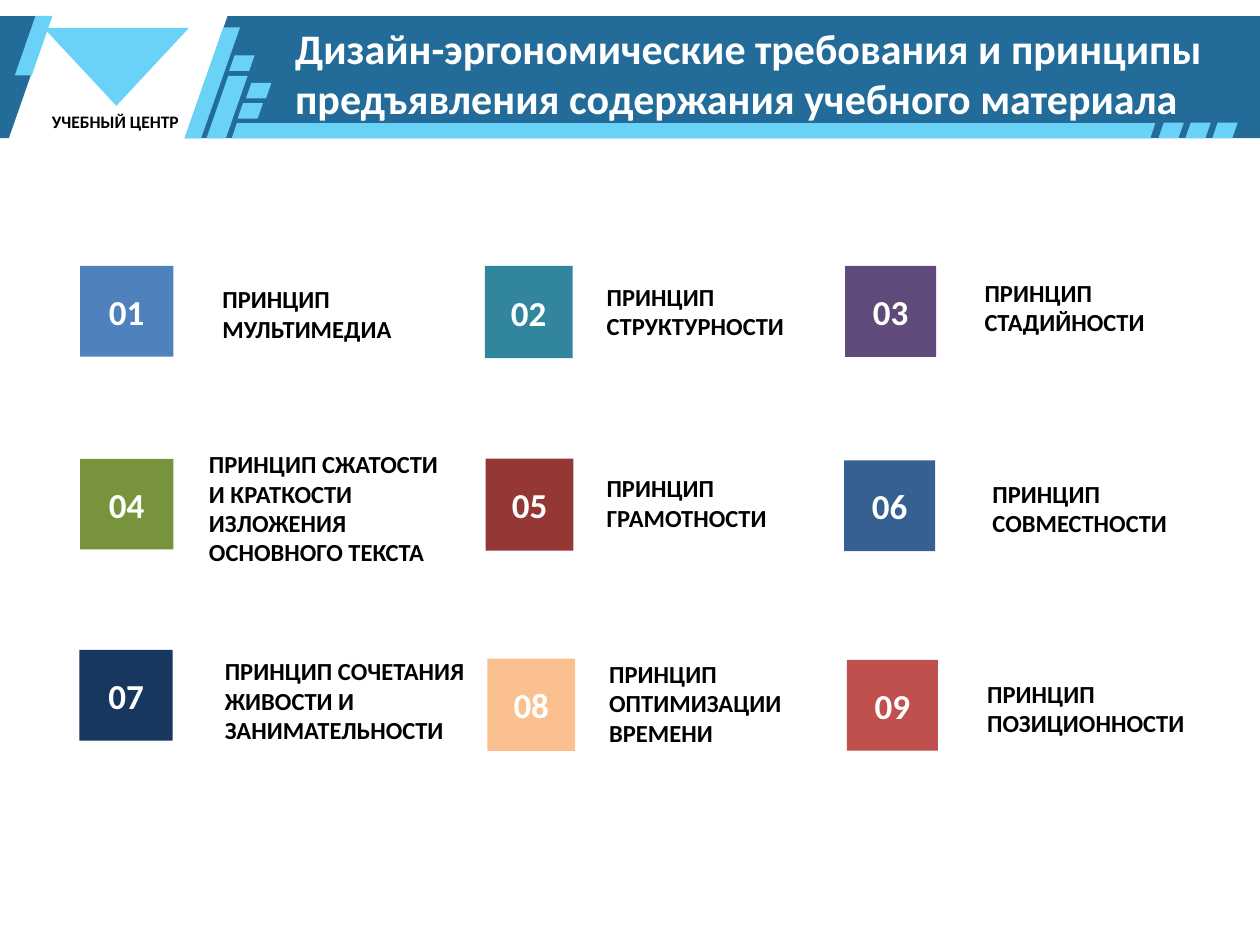
from pptx import Presentation
from pptx.dml.color import RGBColor
from pptx.enum.shapes import MSO_SHAPE as Shape
from pptx.enum.text import MSO_ANCHOR as Anchor, MSO_AUTO_SIZE as AutoSize, PP_ALIGN as Align
from pptx.util import Pt

WHITE = RGBColor(0xFF, 0xFF, 0xFF)
BLACK = RGBColor(0x00, 0x00, 0x00)
BANNER_BLUE = RGBColor(0x23, 0x6C, 0x99)
SKY = RGBColor(0x69, 0xD2, 0xF6)
BLUE = RGBColor(0x4F, 0x81, 0xBD)
TEAL = RGBColor(0x31, 0x85, 0x9C)
PURPLE = RGBColor(0x60, 0x4A, 0x7B)
GREEN = RGBColor(0x77, 0x93, 0x3C)
DARK_RED = RGBColor(0x95, 0x37, 0x35)
STEEL = RGBColor(0x37, 0x60, 0x92)
NAVY = RGBColor(0x17, 0x37, 0x5E)
PEACH = RGBColor(0xFA, 0xC0, 0x90)
RED = RGBColor(0xC0, 0x50, 0x4D)

TITLE = "Дизайн-эргономические требования и принципы предъявления содержания учебного материала"
TILE_SIZES = [(53.3, 51.8), (50.2, 52.7), (52, 51.9)]  # one per column

# Colour, tile left and top, label text, label left, top, width and height
PRINCIPLES = [
    (BLUE, (45.8, 152), "ПРИНЦИП МУЛЬТИМЕДИА", (120, 159, 121, 41)),
    (TEAL, (277, 152), "ПРИНЦИП СТРУКТУРНОСТИ", (339.6, 157.5, 123, 41)),
    (PURPLE, (483, 152), "ПРИНЦИП СТАДИЙНОСТИ", (555.5, 155.2, 129, 41)),
    (GREEN, (45.8, 262.2), "ПРИНЦИП СЖАТОСТИ И КРАТКОСТИ ИЗЛОЖЕНИЯ ОСНОВНОГО ТЕКСТА",
     (112.3, 253.2, 148, 75)),
    (DARK_RED, (277.5, 262), "ПРИНЦИП ГРАМОТНОСТИ", (339.5, 267, 131, 41)),
    (STEEL, (482.4, 263.1), "ПРИНЦИП СОВМЕСТНОСТИ", (560, 270, 135, 41)),
    (NAVY, (45.4, 371.4), "ПРИНЦИП СОЧЕТАНИЯ ЖИВОСТИ И ЗАНИМАТЕЛЬНОСТИ",
     (121.4, 371.4, 158.5, 58)),
    (PEACH, (278.5, 376.4), "ПРИНЦИП ОПТИМИЗАЦИИ ВРЕМЕНИ", (341, 373, 131, 58)),
    (RED, (484, 377), "ПРИНЦИП ПОЗИЦИОННОСТИ", (557, 384.5, 135, 41)),
]

# Slant, then left, top, width and height
STRIPES = [
    (0.55, (8.5, 9.1, 21.5, 34)),
    (0.7, (105.4, 15.6, 31.8, 63.4)),
    (0.53, (118, 43.3, 23.5, 35.7)),
]
DASH_SIZE = (14.5, 8.8)
DASH_SLANT = 0.35
DASHES = [(131, 31.7), (140.6, 47.4), (135.8, 59)] + [(662 + 15.4 * step, 70.1) for step in range(3)]


def add_shape(shapes, kind, area, colour, slant=None):
    """Add a flat preset shape without outline."""
    shape = shapes.add_shape(kind, *map(Pt, area))
    paint(shape, colour)
    if slant is not None:
        shape.adjustments[0] = slant
    return shape


def paint(shape, colour):
    shape.shadow.inherit = False
    shape.fill.solid()
    shape.fill.fore_color.rgb = colour
    shape.line.fill.background()


def write_text(shape, text, size, colour, align=Align.LEFT, anchor=Anchor.TOP):
    """Fill a shape with one bold paragraph."""
    frame = shape.text_frame
    frame_format = {"word_wrap": True, "auto_size": AutoSize.NONE, "vertical_anchor": anchor}
    for name, value in frame_format.items():
        setattr(frame, name, value)
    para = frame.paragraphs[0]
    para.alignment = align
    span = para.add_run()
    span.text = text
    for name, value in {"name": "Calibri", "size": Pt(size), "bold": True}.items():
        setattr(span.font, name, value)
    span.font.color.rgb = colour


def add_label(shapes, area, text, size, align=Align.LEFT):
    box = shapes.add_textbox(*map(Pt, area))
    write_text(box, text, size, BLACK, align)


def add_banner(page):
    """Draw the header band, the emblem and its stripes as one group."""
    shapes = page.shapes.add_group_shape().shapes
    add_shape(shapes, Shape.RECTANGLE, (0, 9.2, 720, 69.8), BANNER_BLUE)
    add_shape(shapes, Shape.PARALLELOGRAM, (0, 0, 133.2, 93.6), WHITE, 0.35)

    # Plain emblem with the organisation name
    add_shape(shapes, Shape.FLOWCHART_MERGE, (25, 16, 83, 44.5), SKY)
    add_label(shapes, (20.9, 59.8, 90, 19.4), "УЧЕБНЫЙ ЦЕНТР", 10, Align.CENTER)

    # Slanted stripes and small dashes
    for slant, area in STRIPES:
        add_shape(shapes, Shape.PARALLELOGRAM, area, SKY, slant)
    for corner in DASHES:
        add_shape(shapes, Shape.PARALLELOGRAM, corner + DASH_SIZE, SKY, DASH_SLANT)

    # Long underline with slanted ends
    outline = shapes.build_freeform(Pt(135.4), Pt(70.3))
    corners = [(660.2, 70.3), (657.4, 79), (132.5, 79)]
    outline.add_line_segments([(Pt(x), Pt(y)) for x, y in corners], close=True)
    paint(outline.convert_to_shape(), SKY)


def add_title(page):
    """Place the title placeholder in front of the banner."""
    title = page.shapes.title
    for name, value in zip(("left", "top", "width", "height"), (161.4, 9.2, 538.6, 65.5)):
        setattr(title, name, Pt(value))
    write_text(title, TITLE, 24, WHITE)
    title.element.getparent().append(title.element)


def add_principle(page, index, colour, corner, text, label_area):
    """Add a numbered tile with its label."""
    size = TILE_SIZES[index % len(TILE_SIZES)]
    tile = add_shape(page.shapes, Shape.RECTANGLE, corner + size, colour)
    write_text(tile, f"{index + 1:02}", 20, WHITE, Align.CENTER, Anchor.MIDDLE)
    add_label(page.shapes, label_area, text, 14)


def main():
    deck = Presentation()
    deck.slide_width, deck.slide_height = Pt(720), Pt(540)
    page = deck.slides.add_slide(deck.slide_layouts[5])
    add_banner(page)
    add_title(page)
    for index, principle in enumerate(PRINCIPLES):
        add_principle(page, index, *principle)
    deck.save("out.pptx")


if __name__ == "__main__":
    main()
